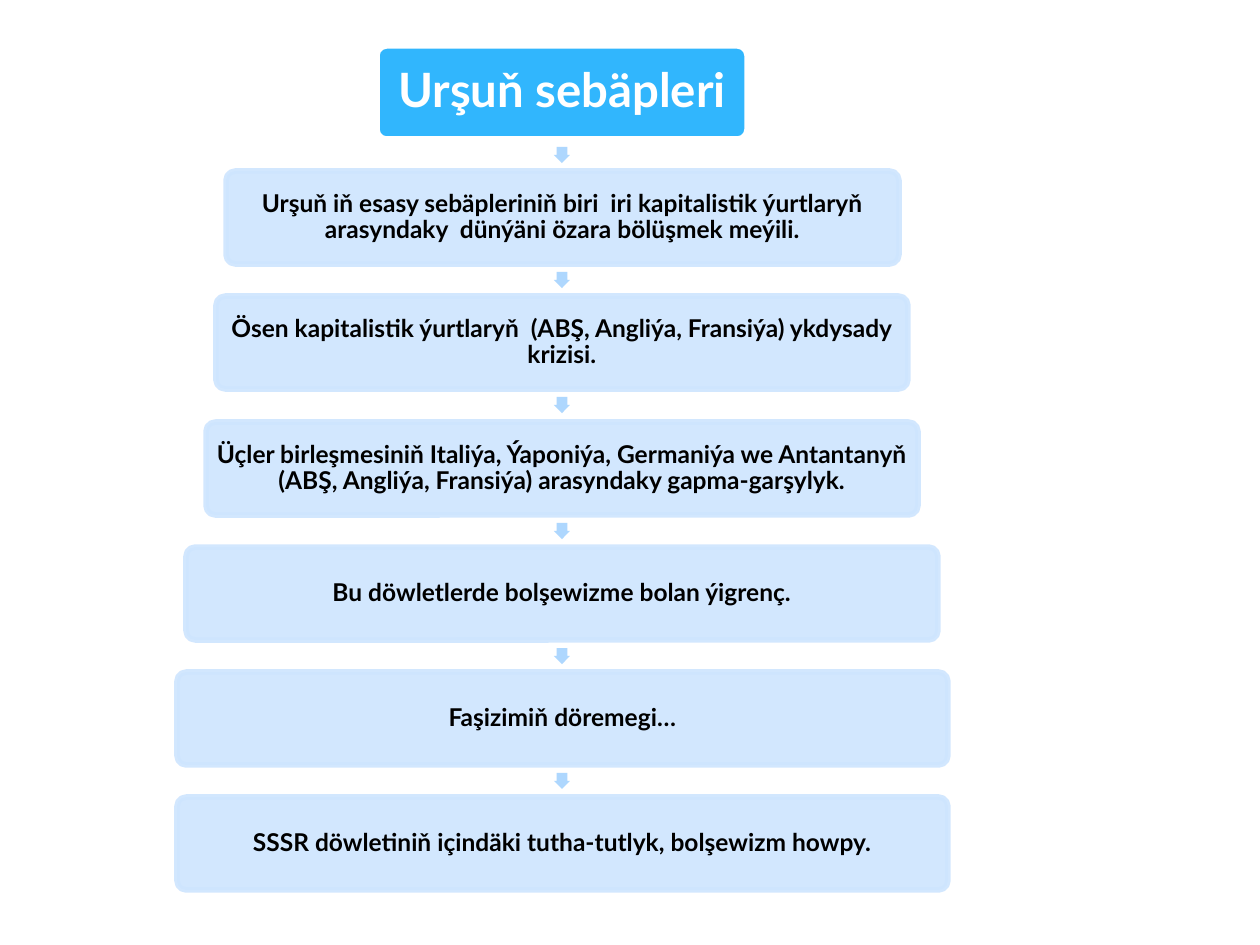
from lxml import etree
from pptx import Presentation, util as u
from pptx.dml.color import RGBColor
from pptx.enum import shapes, text
from pptx.oxml.ns import qn

PX = 914400 // 126
AXIS, TOP, PITCH, HIGH = 562, 46, 125.2, 93
ARROW = 16
TITLE = ("Urşuň sebäpleri", 370)
CAUSES = [
    ("Urşuň iň esasy sebäpleriniň biri  iri kapitalistik ýurtlaryň "
     "arasyndaky  dünýäni özara bölüşmek meýili.", 673),
    ("Ösen kapitalistik ýurtlaryň  (ABŞ, Angliýa, Fransiýa) ykdysady krizisi.", 692),
    ("Üçler birleşmesiniň Italiýa, Ýaponiýa, Germaniýa we Antantanyň "
     "(ABŞ, Angliýa, Fransiýa) arasyndaky gapma-garşylyk.", 712),
    ("Bu döwletlerde bolşewizme bolan ýigrenç.", 752),
    ("Faşizimiň döremegi…", 771),
    ("SSSR döwletiniň içindäki tutha-tutlyk, bolşewizm howpy.", 771),
]


def paint(fill, color, alpha=100):
    fill.solid()
    fill.fore_color.rgb = RGBColor.from_string(color)
    if alpha < 100:
        # The colour element is the only srgbClr below the fill's owner.
        tone = fill._xPr.find(qn("a:solidFill")).find(qn("a:srgbClr"))
        etree.SubElement(tone, qn("a:alpha")).set("val", str(alpha * 1000))


def add_shape(slide, kind, box, color, alpha=100):
    shape = slide.shapes.add_shape(kind, *(n * PX for n in box))
    shape.shadow.inherit = False
    paint(shape.fill, color, alpha)
    return shape


def add_card(slide, box, words, size, ink, color, edge, alpha, inset):
    card = add_shape(slide, shapes.MSO_SHAPE.ROUNDED_RECTANGLE, box, color, alpha)
    card.adjustments[0] = 0.1
    card.line.width = u.Pt(3.15)
    paint(card.line.fill, edge, alpha)

    frame = card.text_frame
    frame.word_wrap = True
    frame.vertical_anchor = text.MSO_ANCHOR.MIDDLE
    frame.margin_left = frame.margin_right = inset * PX
    frame.margin_top = frame.margin_bottom = inset * PX
    frame.text = words
    para = frame.paragraphs[0]
    para.alignment = text.PP_ALIGN.CENTER
    para.line_spacing = 0.9
    para.space_after = u.Pt(size * 0.35)
    font = para.runs[0].font
    font.name, font.size, font.bold = "Lato", u.Pt(size), True
    font.color.rgb = RGBColor.from_string(ink)


def add_arrow(slide, box):
    arrow = add_shape(slide, shapes.MSO_SHAPE.RIGHT_ARROW, box, "AED7FE")
    arrow.line.fill.background()
    arrow.adjustments[0], arrow.adjustments[1] = 0.667, 0.5
    arrow.rotation = 90


def add_chain(slide, axis, top):
    """Stack the title and its causes on one axis, with an arrow in each gap."""
    def place(wide, y):
        return axis - wide // 2, y, wide, HIGH

    words, wide = TITLE
    add_card(slide, place(wide, top), words, 27, "FFFFFF", "31B6FD", "FFFFFF", 100, 5)
    last = top
    for row, (words, wide) in enumerate(CAUSES, 1):
        y = top + round(row * PITCH)
        mid = (last + HIGH + y) // 2
        add_arrow(slide, (axis - ARROW // 2, mid - ARROW // 2, ARROW, ARROW))
        add_card(slide, place(wide, y), words, 14, "000000", "CEE5FE", "CEE5FE", 90, 3)
        last = y


def main():
    deck = Presentation()
    deck.slide_width, deck.slide_height = u.Inches(10), u.Inches(7.5)
    slide = deck.slides.add_slide(deck.slide_layouts[6])
    add_chain(slide, AXIS, TOP)
    deck.save("out.pptx")


if __name__ == "__main__":
    main()
